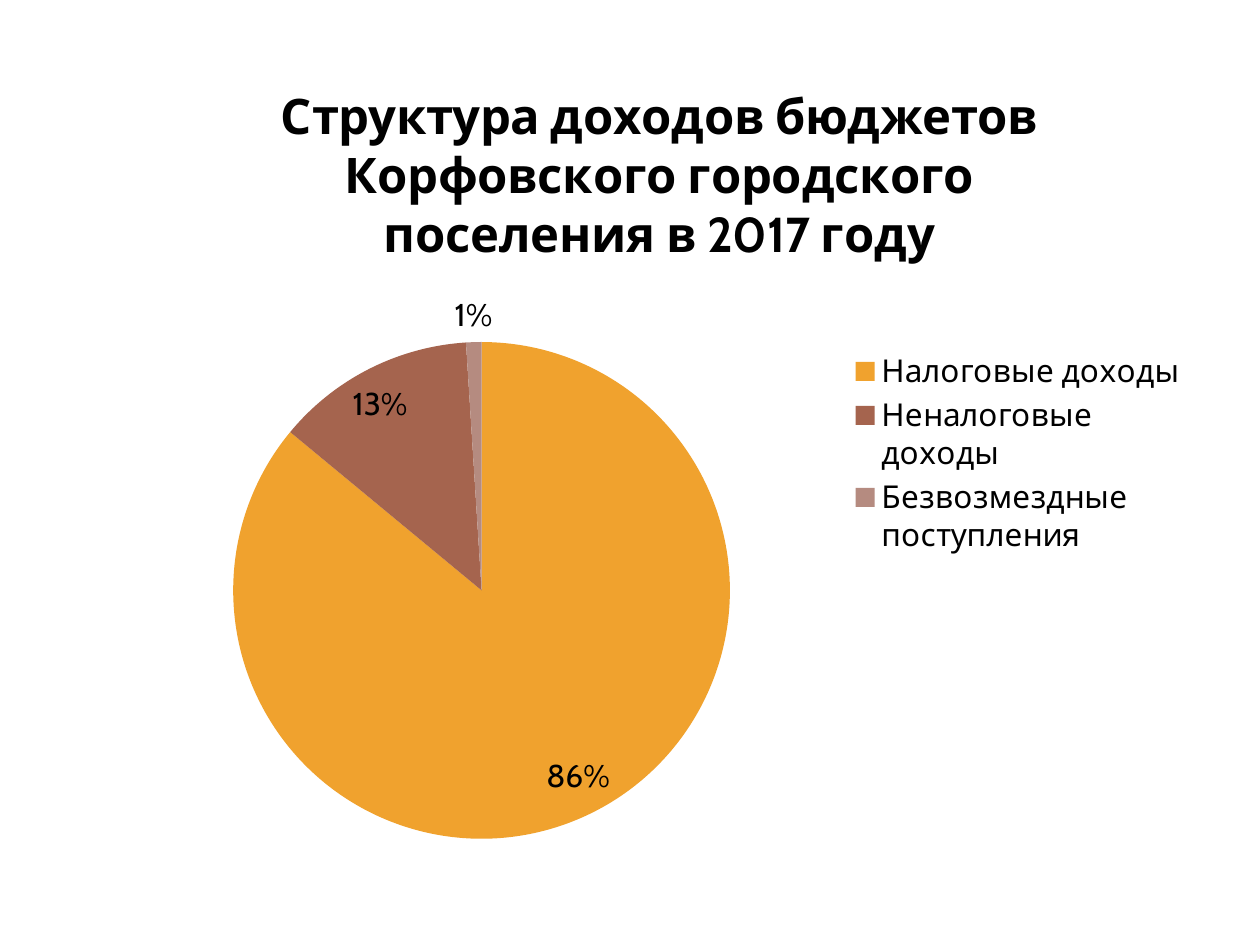
"""Build a slide with a pie chart of the settlement's budget revenue structure in 2017."""
from lxml.etree import SubElement
from pptx import Presentation
from pptx.chart.data import CategoryChartData
from pptx.dml.color import RGBColor
from pptx.enum.chart import XL_CHART_TYPE as ChartType
from pptx.enum.chart import XL_LABEL_POSITION as LabelPosition
from pptx.enum.chart import XL_LEGEND_POSITION as LegendPosition
from pptx.oxml.ns import qn
from pptx.util import Inches, Pt

HEADING = "Структура доходов бюджетов Корфовского городского поселения в 2017 году"
REVENUES = [
    ("Налоговые доходы", 86, "tax"),
    ("Неналоговые доходы", 13, "non_tax"),
    ("Безвозмездные поступления", 1, "grants"),
]
COLORS = {"tax": "F0A22E", "non_tax": "A5644E", "grants": "B58B80", "text": "000000"}
FONT = "Cabin"
SLIDE = (10, 7.5)
CHART_PERCENT = (9.4, 5.2, 85.9, 85.5)
AREAS_PERCENT = {
    "c:title": {"x": 14.2, "y": 2.9},
    "c:plotArea": {"x": 10.6, "y": 36.2, "w": 45.9, "h": 61.6},
    "c:legend": {"x": 67.6, "y": 36.8, "w": 31, "h": 26.5},
}


def style(font, size, bold=False):
    font.name, font.size, font.bold = FONT, Pt(size), bold
    font.color.rgb = RGBColor.from_string(COLORS["text"])


def place(chart, tag, area):
    part = chart.element.find(".//" + qn(tag))
    for old in part.findall(qn("c:layout")):
        part.remove(old)
    layout = SubElement(part, qn("c:layout"))
    manual = SubElement(layout, qn("c:manualLayout"))
    if tag == "c:plotArea":
        SubElement(manual, qn("c:layoutTarget")).set("val", "inner")
    for axis in "xy":
        SubElement(manual, qn(f"c:{axis}Mode")).set("val", "edge")
    for key, percent in area.items():
        SubElement(manual, qn(f"c:{key}")).set("val", str(percent / 100))
    follower = part.find(qn("c:pieChart" if tag == "c:plotArea" else "c:overlay"))
    follower.addprevious(layout)


def main():
    deck = Presentation()
    deck.slide_width, deck.slide_height = (Inches(side) for side in SLIDE)
    slide = deck.slides.add_slide(deck.slide_layouts[6])

    data = CategoryChartData()
    data.categories = [name for name, _, _ in REVENUES]
    data.add_series(HEADING, [share for _, share, _ in REVENUES])
    frame = [Inches(part * side / 100) for part, side in zip(CHART_PERCENT, SLIDE * 2)]
    chart = slide.shapes.add_chart(ChartType.PIE, *frame, data).chart
    style(chart.font, 18)

    chart.has_title = True
    heading = chart.chart_title.text_frame.paragraphs[0].add_run()
    heading.text = HEADING
    style(heading.font, 28, bold=True)
    chart.chart_title.include_in_layout = False

    chart.has_legend = True
    chart.legend.position = LegendPosition.RIGHT
    chart.legend.include_in_layout = False
    style(chart.legend.font, 18)

    pie = chart.plots[0]
    pie.vary_by_categories = True
    for index, (_, _, kind) in enumerate(REVENUES):
        fill = pie.series[0].points[index].format.fill
        fill.solid()
        fill.fore_color.rgb = RGBColor.from_string(COLORS[kind])

    labels = pie.series[0].data_labels
    labels.show_percentage, labels.show_value = True, False
    labels.number_format, labels.number_format_is_linked = "0%", False
    labels.position = LabelPosition.BEST_FIT
    style(labels.font, 18)

    for tag, area in AREAS_PERCENT.items():
        place(chart, tag, area)
    deck.save("out.pptx")


if __name__ == "__main__":
    main()
